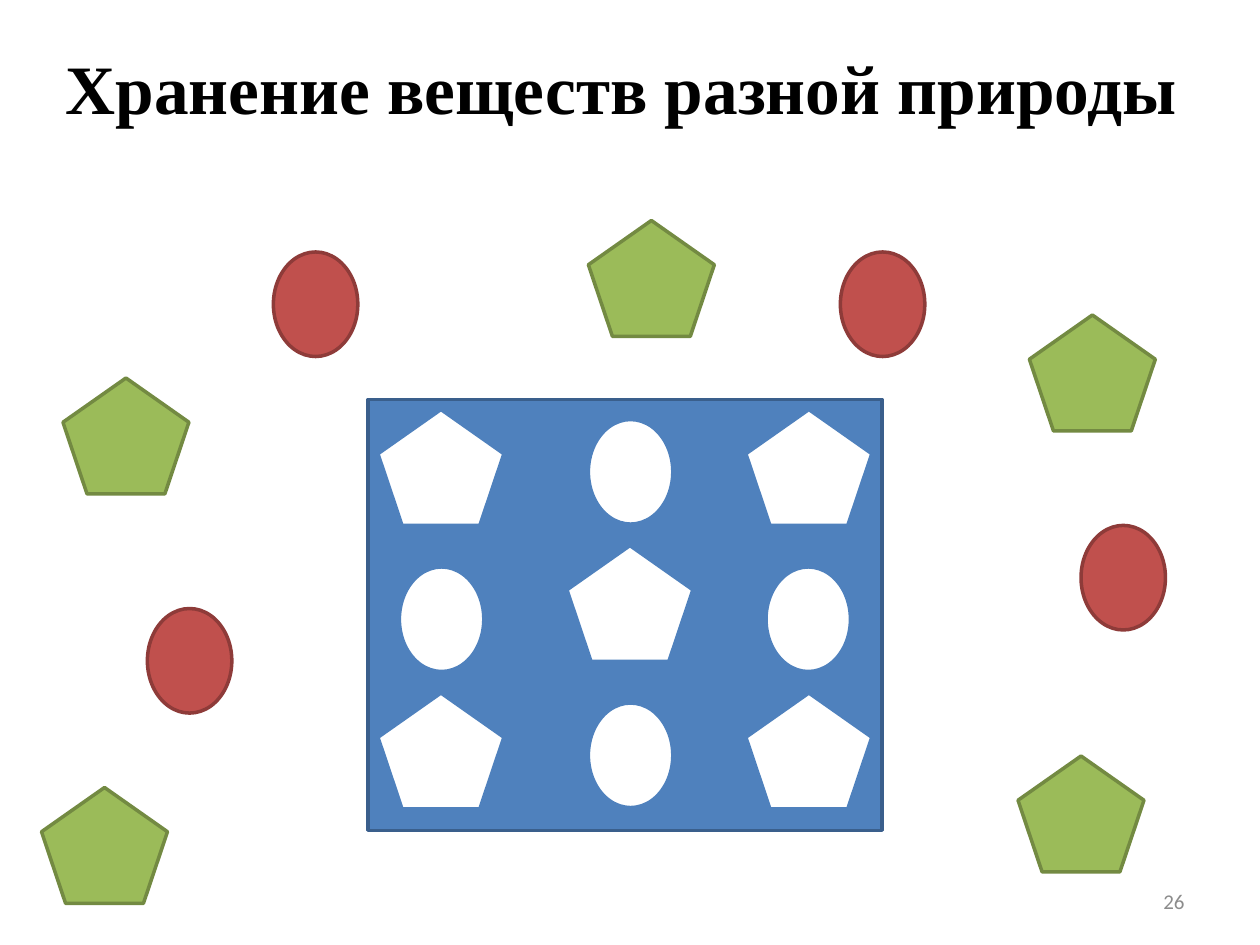
from pptx import Presentation
from pptx.dml.color import RGBColor
from pptx.enum.shapes import MSO_SHAPE
from pptx.enum.text import MSO_ANCHOR, PP_ALIGN
from pptx.util import Inches, Pt

RECT, OVAL, PENTAGON = MSO_SHAPE.RECTANGLE, MSO_SHAPE.OVAL, MSO_SHAPE.REGULAR_PENTAGON
MIDDLE = MSO_ANCHOR.MIDDLE
TITLE_ONLY = 5

COLORS = {
    "black": "000000", "grey": "8C8C8C", "white": "FFFFFF",
    "blue": "4F81BD", "dark_blue": "3A5F8C",
    "green": "9BBB59", "dark_green": "738A42",
    "red": "C0504D", "dark_red": "8E3B39",
}
TITLE = "Хранение веществ разной природы "
PAGE = "26"

STORE = (2.92, 3.17, 4.08, 3.42)
SIZES = {OVAL: (0.67, 0.83), PENTAGON: (1, 0.92)}

# (shape, fill, line, left-top positions)
GROUPS = [
    (OVAL, "white", "blue", [(3.17, 4.5), (6.08, 4.5), (4.67, 3.33), (4.67, 5.58)]),
    (PENTAGON, "white", "blue",
     [(4.5, 4.33), (3, 3.25), (5.92, 3.25), (3, 5.5), (5.92, 5.5)]),
    (PENTAGON, "green", "dark_green",
     [(4.67, 1.75), (0.5, 3), (8.17, 2.5), (8.08, 6), (0.33, 6.25)]),
    (OVAL, "red", "dark_red", [(2.17, 2), (1.17, 4.83), (6.67, 2), (8.58, 4.17)]),
]


def rgb(name):
    return RGBColor.from_string(COLORS[name])


def add_figure(s, kind, box, fill, line):
    sp = s.shapes.add_shape(kind, *map(Inches, box))
    sp.shadow.inherit = False
    sp.fill.solid()
    sp.fill.fore_color.rgb = rgb(fill)
    sp.line.color.rgb = rgb(line)
    sp.line.width = Pt(2)


def set_text(sp, text, font, size, color, align, bold=False):
    tf = sp.text_frame
    tf.text = text
    tf.word_wrap = True
    tf.vertical_anchor = MIDDLE
    p = tf.paragraphs[0]
    p.alignment = align
    f = p.runs[0].font
    f.name, f.size, f.bold = font, Pt(size), bold
    f.color.rgb = rgb(color)


prs = Presentation()
prs.slide_width, prs.slide_height = Inches(10), Inches(7.5)
s = prs.slides.add_slide(prs.slide_layouts[TITLE_ONLY])

title = s.shapes.title
title.left, title.top, title.width, title.height = map(Inches, (0, 0.3, 10, 0.78))
set_text(title, TITLE, "Times New Roman", 39.6, "black", PP_ALIGN.CENTER, bold=True)

add_figure(s, RECT, STORE, "blue", "dark_blue")
for kind, fill, line, positions in GROUPS:
    for position in positions:
        add_figure(s, kind, position + SIZES[kind], fill, line)

number = s.shapes.add_textbox(*map(Inches, (7.17, 6.95, 2.33, 0.4)))
set_text(number, PAGE, "Calibri", 12, "grey", PP_ALIGN.RIGHT)

prs.save("out.pptx")
